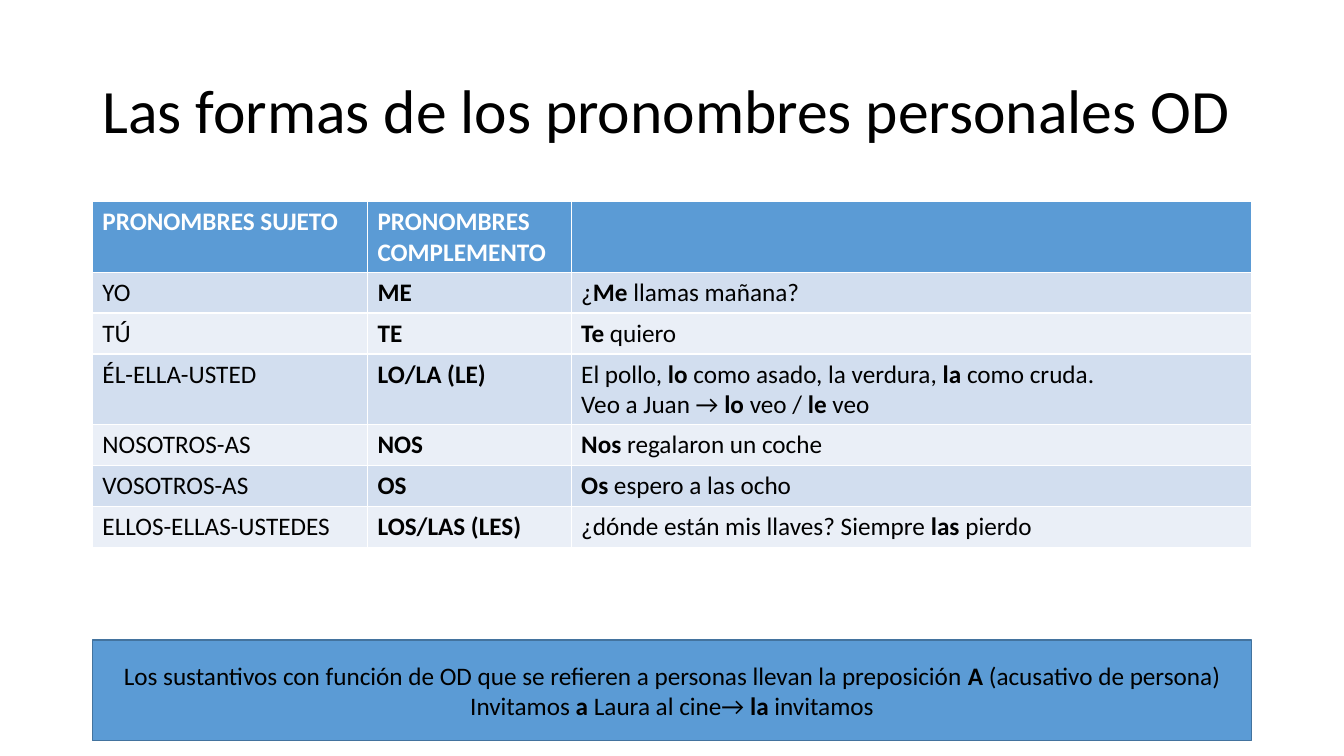
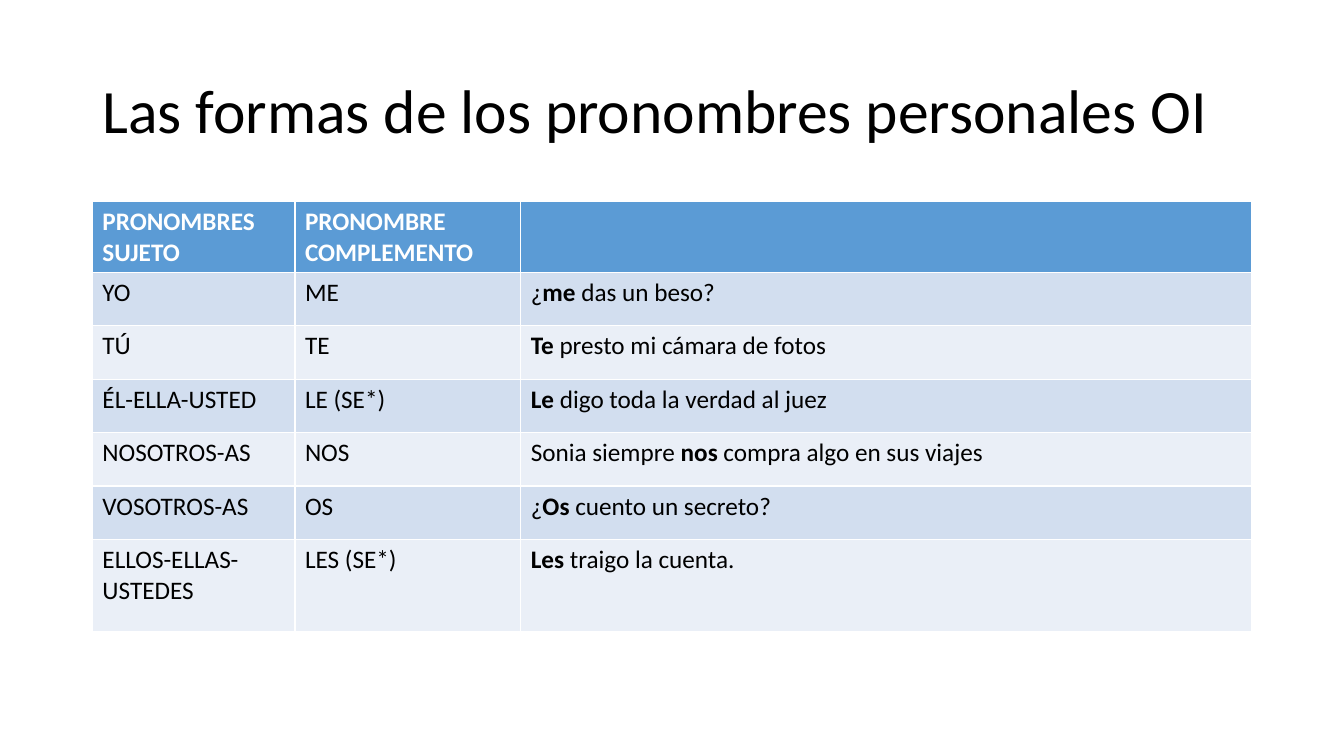
from dataclasses import dataclass

from pptx import Presentation
from pptx.dml.color import RGBColor
from pptx.enum import shapes, text
from pptx.util import Pt


@dataclass(frozen=True)
class Theme:
    font: str = "Calibri"
    title_size: float = 44
    body_size: float = 18
    ink: RGBColor = RGBColor.from_string("000000")
    paper: RGBColor = RGBColor.from_string("FFFFFF")
    accent: RGBColor = RGBColor.from_string("5B9BD5")
    outline: RGBColor = RGBColor.from_string("43739E")
    bands: tuple = (RGBColor.from_string("D2DEEF"), RGBColor.from_string("EAEFF7"))


THEME = Theme()
LEFT, WIDTH = 66, 828
TITLE_TOP, TITLE_HEIGHT = 28.8, 104.4
TABLE_TOP = 144
NOTE_TOP, NOTE_HEIGHT = 457.2, 72

# Text between bars is bold; a line break starts a new paragraph.
SLIDES = [
    {
        "title": "Las formas de los pronombres personales OD",
        "columns": [196.5, 145.5, 486],
        "heights": [29.2] * 7,
        "header": ["PRONOMBRES SUJETO", "PRONOMBRES COMPLEMENTO", ""],
        "rows": [
            ["YO", "|ME|", "¿|Me| llamas mañana?"],
            ["TÚ", "|TE|", "|Te| quiero"],
            ["ÉL-ELLA-USTED", "|LO/LA (LE)|",
             "El pollo, |lo| como asado, la verdura, |la| como cruda.\n"
             "Veo a Juan →| lo |veo / |le |veo"],
            ["NOSOTROS-AS", "|NOS|", "|Nos| regalaron un coche"],
            ["VOSOTROS-AS", "|OS|", "|Os| espero a las ocho"],
            ["ELLOS-ELLAS-USTEDES", "|LOS/LAS (LES)|",
             "¿dónde están mis llaves? Siempre |las| pierdo"],
        ],
        "note": "Los sustantivos con función de OD que se refieren a personas "
                "llevan la preposición |A| (acusativo de persona)\n"
                "Invitamos| a |Laura al cine→ |la| invitamos",
    },
    {
        "title": "Las formas de los pronombres personales OI",
        "columns": [144.7, 161.3, 522],
        "heights": [38.2] * 6 + [65.5],
        "header": ["PRONOMBRES SUJETO", "PRONOMBRE COMPLEMENTO", ""],
        "rows": [
            ["YO", "ME", "¿|me| das un beso?"],
            ["TÚ", "TE", "|Te |presto mi cámara de fotos"],
            ["ÉL-ELLA-USTED", "LE (SE*)", "|Le| digo toda la verdad al juez"],
            ["NOSOTROS-AS", "NOS", "Sonia siempre |nos| compra algo en sus viajes"],
            ["VOSOTROS-AS", "OS", "¿|Os| cuento un secreto?"],
            ["ELLOS-ELLAS-USTEDES", "LES (SE*)", "|Les| traigo la cuenta."],
        ],
    },
]


def write(tf, marked, size=THEME.body_size, color=THEME.ink, align=None):
    """Fill a text frame, turning the parts between bars bold."""
    for i, line in enumerate(marked.split("\n")):
        p = tf.paragraphs[0] if i == 0 else tf.add_paragraph()
        p.font.name, p.font.size = THEME.font, Pt(size)
        p.font.color.rgb = color
        p.alignment = align
        for j, part in enumerate(line.split("|")):
            if part:
                r = p.add_run()
                r.text = part
                r.font.bold = j % 2 == 1


def add_title(s, title):
    tf = s.shapes.add_textbox(Pt(LEFT), Pt(TITLE_TOP), Pt(WIDTH), Pt(TITLE_HEIGHT)).text_frame
    tf.word_wrap = True
    tf.vertical_anchor = text.MSO_ANCHOR.MIDDLE
    write(tf, title, THEME.title_size)
    tf.paragraphs[0].line_spacing = 0.9


def add_pronoun_table(s, columns, heights, header, rows):
    table = s.shapes.add_table(len(heights), len(columns), Pt(LEFT), Pt(TABLE_TOP),
                               Pt(WIDTH), Pt(sum(heights))).table
    for column, width in zip(table.columns, columns):
        column.width = Pt(width)
    for row, height in zip(table.rows, heights):
        row.height = Pt(height)
    bold_header = [f"|{label}|" for label in header]
    for i, values in enumerate([bold_header] + rows):
        fill = THEME.bands[(i - 1) % 2] if i else THEME.accent
        color = THEME.ink if i else THEME.paper
        for j, value in enumerate(values):
            cell = table.cell(i, j)
            cell.fill.solid()
            cell.fill.fore_color.rgb = fill
            write(cell.text_frame, value, color=color)


def add_note(s, note):
    sp = s.shapes.add_shape(shapes.MSO_SHAPE.RECTANGLE, Pt(LEFT), Pt(NOTE_TOP),
                            Pt(WIDTH), Pt(NOTE_HEIGHT))
    sp.shadow.inherit = False
    sp.fill.solid()
    sp.fill.fore_color.rgb = THEME.accent
    sp.line.color.rgb = THEME.outline
    sp.line.width = Pt(1)
    tf = sp.text_frame
    tf.word_wrap = True
    tf.vertical_anchor = text.MSO_ANCHOR.MIDDLE
    write(tf, note, align=text.PP_ALIGN.CENTER)


def main():
    prs = Presentation()
    prs.slide_width, prs.slide_height = Pt(960), Pt(540)
    for content in SLIDES:
        s = prs.slides.add_slide(prs.slide_layouts[6])
        add_title(s, content["title"])
        add_pronoun_table(s, content["columns"], content["heights"],
                          content["header"], content["rows"])
        if "note" in content:
            add_note(s, content["note"])
    prs.save("out.pptx")


if __name__ == "__main__":
    main()
